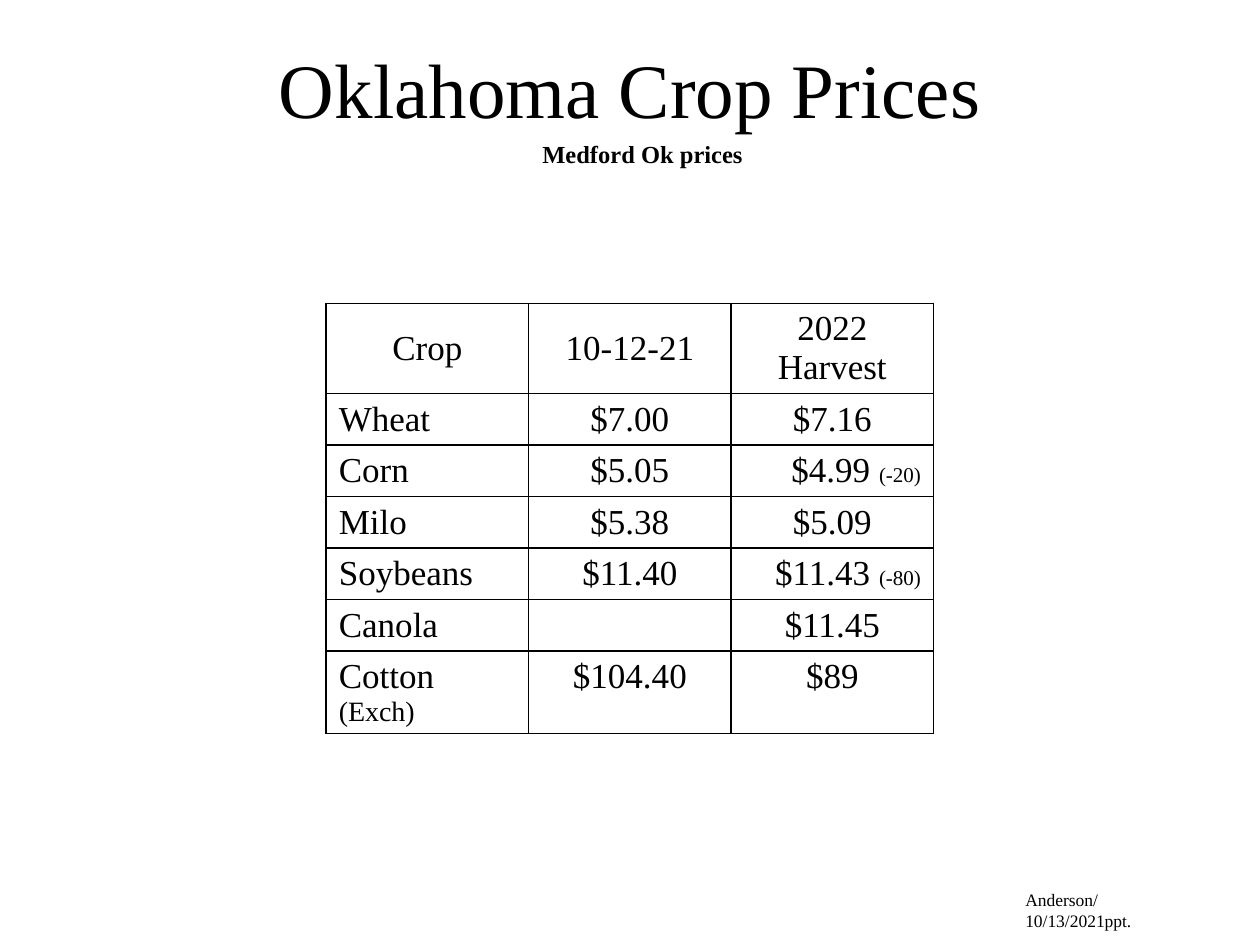
from dataclasses import dataclass

import pptx
import pptx.dml.color
import pptx.enum.text
import pptx.oxml
import pptx.oxml.ns
import pptx.util

Pt = pptx.util.Pt
ALIGN = pptx.enum.text.PP_ALIGN
ANCHOR = pptx.enum.text.MSO_ANCHOR

BLACK = pptx.dml.color.RGBColor(0, 0, 0)
WHITE = pptx.dml.color.RGBColor(255, 255, 255)
FONT_FORMAT = {"name": "Times New Roman", "bold": False}


@dataclass(frozen=True)
class Span:
    text: str
    size: float = 20
    bold: bool = False
    new_line: bool = False


@dataclass(frozen=True)
class Entry:
    spans: tuple[Span, ...]
    align: int = ALIGN.CENTER
    anchor: int = ANCHOR.TOP


@dataclass(frozen=True)
class Caption:
    left: float
    top: float
    width: float
    height: float
    wraps: bool
    entry: Entry


def apply_format(target, values: dict) -> None:
    for attribute, value in values.items():
        setattr(target, attribute, value)


def write_entry(paragraph, entry: Entry) -> None:
    paragraph.alignment = entry.align
    for span in entry.spans:
        if span.new_line:
            paragraph.add_line_break()
        run = paragraph.add_run()
        run.text = span.text
        apply_format(run.font, FONT_FORMAT | {"size": Pt(span.size), "bold": span.bold})
        run.font.color.rgb = BLACK


def draw_caption(slide, caption: Caption) -> None:
    box = slide.shapes.add_textbox(
        Pt(caption.left), Pt(caption.top), Pt(caption.width), Pt(caption.height)
    )
    apply_format(box.text_frame, {
        "word_wrap": caption.wraps,
        "auto_size": pptx.enum.text.MSO_AUTO_SIZE.SHAPE_TO_FIT_TEXT,
    })
    write_entry(box.text_frame.paragraphs[0], caption.entry)


def draw_borders(cell, color, width: float) -> None:
    properties = cell._tc.get_or_add_tcPr()
    for position, side in enumerate(("lnL", "lnR", "lnT", "lnB")):
        border = pptx.oxml.parse_xml(
            f'<a:{side} {pptx.oxml.ns.nsdecls("a")} w="{Pt(width)}">'
            f'<a:solidFill><a:srgbClr val="{color}"/></a:solidFill></a:{side}>'
        )
        properties.insert(position, border)


def draw_prices(slide, rows: list[tuple[Entry, ...]]) -> None:
    column_width, header_height, row_height = 115.7, 51.6, 29.4
    column_count = len(rows[0])
    prices = slide.shapes.add_table(
        len(rows), column_count, Pt(186.4), Pt(173.3),
        Pt(column_width * column_count),
        Pt(header_height + row_height * (len(rows) - 1)),
    ).table
    apply_format(prices, {"first_row": False, "horz_banding": False})
    for column in prices.columns:
        column.width = Pt(column_width)
    for row_index, entries in enumerate(rows):
        prices.rows[row_index].height = Pt(row_height if row_index else header_height)
        for column_index, entry in enumerate(entries):
            cell = prices.cell(row_index, column_index)
            cell.vertical_anchor = entry.anchor
            cell.fill.background()
            draw_borders(cell, BLACK, 1)
            write_entry(cell.text_frame.paragraphs[0], entry)


def crop(name: str, *notes: Span) -> Entry:
    return Entry((Span(name), *notes), ALIGN.LEFT)


def price(amount: str) -> Entry:
    return Entry((Span(amount),))


def adjusted_price(amount: str, basis: str) -> Entry:
    return Entry((Span(f"{amount} "), Span(basis, 12)), ALIGN.RIGHT)


def heading(text: str) -> Entry:
    return Entry((Span(text),), anchor=ANCHOR.MIDDLE)


PRICE_ROWS = [
    (heading("Crop"), heading("10-12-21"), heading("2022 Harvest")),
    (crop("Wheat"), price("$7.00"), price("$7.16")),
    (crop("Corn"), price("$5.05"), adjusted_price("$4.99", "(-20)")),
    (crop("Milo"), price("$5.38"), price("$5.09")),
    (crop("Soybeans"), price("$11.40"), adjusted_price("$11.43", "(-80)")),
    (crop("Canola"), Entry(()), price("$11.45")),
    (crop("Cotton ", Span("(Exch)", 16)), price("$104.40"), price("$89")),
]

CAPTIONS = [
    Caption(578.8, 504.7, 113, 19.5, True, Entry(
        (Span("Anderson/", 10), Span("10/13/2021ppt.", 10, new_line=True)), ALIGN.LEFT)),
    Caption(302.8, 76, 130.3, 24.5, False, Entry(
        (Span("Medford Ok prices", 14, bold=True),), ALIGN.LEFT)),
]


def main() -> None:
    presentation = pptx.Presentation()
    apply_format(presentation, {"slide_width": Pt(720), "slide_height": Pt(540)})
    slide = presentation.slides.add_slide(presentation.slide_layouts[5])
    slide.background.fill.solid()
    slide.background.fill.fore_color.rgb = WHITE

    title = slide.shapes.title
    apply_format(title, {
        "left": Pt(36), "top": Pt(5), "width": Pt(648), "height": Pt(90),
    })
    title.text_frame.vertical_anchor = ANCHOR.MIDDLE
    write_entry(title.text_frame.paragraphs[0], Entry((Span("Oklahoma Crop Prices", 44),)))

    draw_prices(slide, PRICE_ROWS)
    for caption in CAPTIONS:
        draw_caption(slide, caption)
    presentation.save("out.pptx")


if __name__ == "__main__":
    main()
